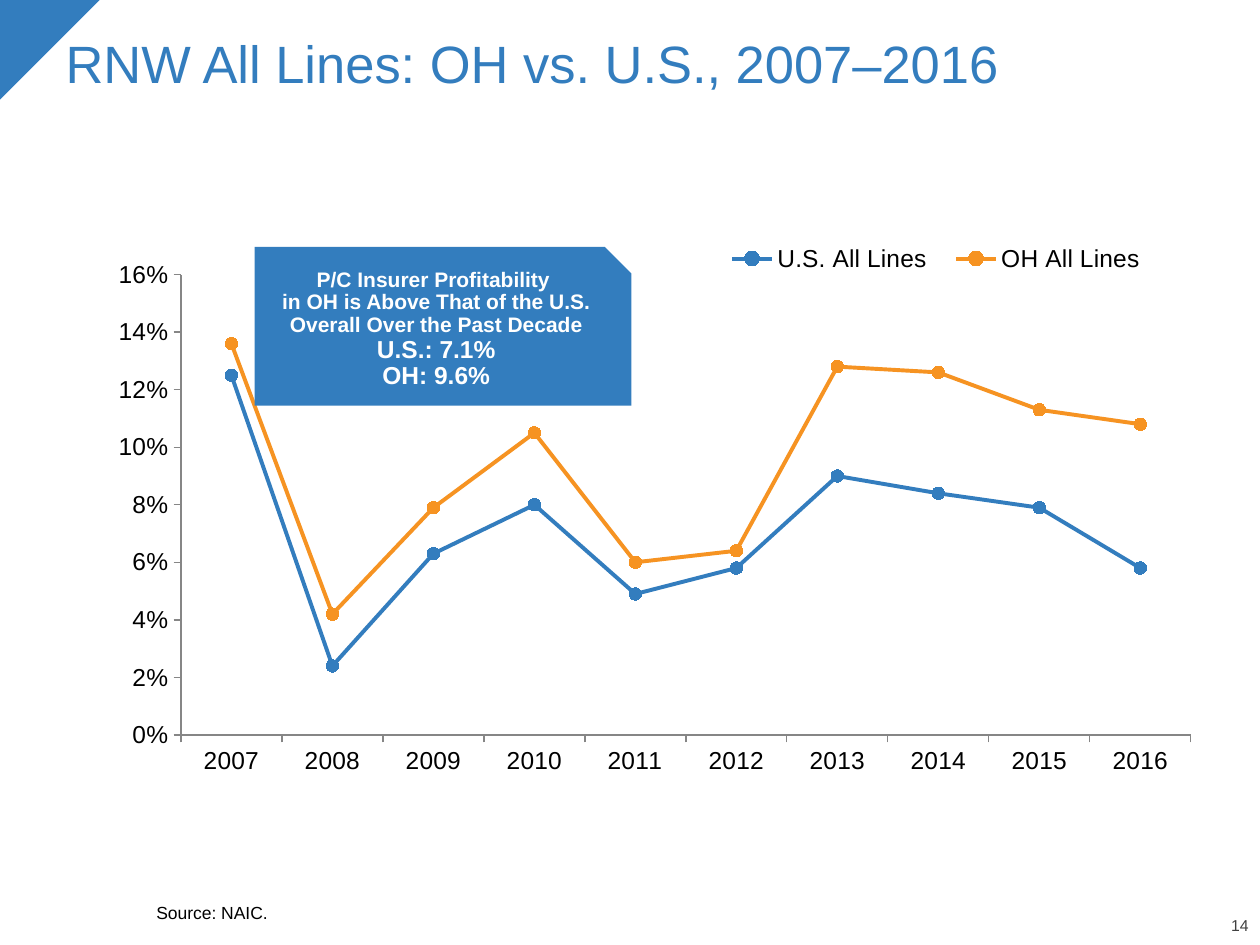
from lxml import etree
from pptx import Presentation
from pptx.chart.data import CategoryChartData
from pptx.dml.color import RGBColor
from pptx.enum.chart import (XL_CHART_TYPE as ChartType, XL_LEGEND_POSITION as LegendPos,
                             XL_MARKER_STYLE as Marker, XL_TICK_MARK as Tick)
from pptx.enum.shapes import MSO_SHAPE as Shape
from pptx.enum.text import MSO_ANCHOR as Anchor, MSO_AUTO_SIZE as AutoSize, PP_ALIGN as Align
from pptx.oxml.ns import qn
from pptx.util import Inches, Pt

BLUE, ORANGE, BLACK, WHITE = "337DBE", "F69322", "000000", "FFFFFF"
DARK_GREY, AXIS_GREY = "404040", "868686"
YEARS = [str(year) for year in range(2007, 2017)]
RETURNS = [
    ("U.S. All Lines", BLUE,
     [0.125, 0.024, 0.063, 0.08, 0.049, 0.058, 0.09, 0.084, 0.079, 0.058]),
    ("OH All Lines", ORANGE,
     [0.136, 0.042, 0.079, 0.105, 0.06, 0.064, 0.128, 0.126, 0.113, 0.108]),
]


def rgb(value):
    return RGBColor.from_string(value)


def box(*lengths):
    return [Inches(length) for length in lengths]


def set_attrs(target, values):
    for name, value in values.items():
        setattr(target, name, value)


def set_font(font, size, color, bold=False):
    set_attrs(font, {"name": "Arial", "size": Pt(size), "bold": bold})
    font.color.rgb = rgb(color)


def set_frame(tf, insets, anchor):
    names = ("margin_left", "margin_top", "margin_right", "margin_bottom")
    set_attrs(tf, dict(zip(names, box(*insets))))
    set_attrs(tf, {"word_wrap": True, "auto_size": AutoSize.NONE, "vertical_anchor": anchor})


def write(p, lines, color, align=Align.LEFT, bold=False):
    """Fill a paragraph with (text, size) lines parted by line breaks."""
    set_attrs(p, {"alignment": align, "line_spacing": 0.9, "space_before": Pt(0)})
    for i, (text, size) in enumerate(lines):
        if i:
            p.add_line_break()
        r = p.add_run()
        r.text = text
        set_font(r.font, size, color, bold)


def place(sp, bounds):
    set_attrs(sp, dict(zip(("left", "top", "width", "height"), box(*bounds))))


def add_filled(slide, kind, bounds):
    sp = slide.shapes.add_shape(kind, *box(*bounds))
    sp.shadow.inherit = False
    sp.fill.solid()
    sp.fill.fore_color.rgb = rgb(BLUE)
    sp.line.fill.background()
    return sp


def add_corner(slide):
    add_filled(slide, Shape.RIGHT_TRIANGLE, (-0.01, 0, 0.8, 0.8)).rotation = 90


def add_page_number(slide):
    tf = slide.shapes.add_textbox(*box(9.43, 7.29, 0.48, 0.13)).text_frame
    set_frame(tf, (0, 0, 0, 0), Anchor.BOTTOM)
    write(tf.paragraphs[0], [("14", 9)], DARK_GREY, Align.RIGHT)


def fill_title(slide):
    sp = slide.shapes.title
    place(sp, (0.42, 0.25, 9.25, 1.04))
    set_frame(sp.text_frame, (0.1, 0.05, 0.1, 0.05), Anchor.TOP)
    write(sp.text_frame.paragraphs[0], [("RNW All Lines: OH vs. U.S., 2007–2016", 30)], BLUE)


def fill_source(slide):
    sp = slide.placeholders[1]
    place(sp, (1.24, 6.88, 8.4, 0.45))
    set_frame(sp.text_frame, (0, 0, 0, 0), Anchor.BOTTOM)
    p = sp.text_frame.paragraphs[0]
    pPr = p._p.get_or_add_pPr()
    pPr.set("marL", "0")
    pPr.set("indent", "0")
    etree.SubElement(pPr, qn("a:buNone"))
    write(p, [("Source: NAIC.", 10)], BLACK)


def set_layout(parent, values, before):
    """Give a plot area or legend a fixed place, in fractions of the chart."""
    for old in parent.findall(qn("c:layout")):
        parent.remove(old)
    layout = etree.Element(qn("c:layout"))
    manual = etree.SubElement(layout, qn("c:manualLayout"))
    for name, value in values.items():
        etree.SubElement(manual, qn(f"c:{name}")).set("val", str(value))
    parent.find(qn(before)).addprevious(layout)


def style_axis(axis, number_format):
    set_attrs(axis, {"has_major_gridlines": False, "major_tick_mark": Tick.OUTSIDE,
                     "minor_tick_mark": Tick.NONE})
    set_attrs(axis.tick_labels, {"number_format": number_format,
                                 "number_format_is_linked": False})
    set_font(axis.tick_labels.font, 14, BLACK)
    axis.format.line.color.rgb = rgb(AXIS_GREY)
    axis.format.line.width = Pt(0.75)


def style_series(series, color):
    series.smooth = False
    series.format.line.color.rgb = rgb(color)
    series.format.line.width = Pt(2.25)
    set_attrs(series.marker, {"style": Marker.CIRCLE, "size": 7})
    fmt = series.marker.format
    fmt.fill.solid()
    fmt.fill.fore_color.rgb = rgb(color)
    fmt.line.color.rgb = rgb(color)


def add_returns_chart(slide):
    data = CategoryChartData(number_format="0%")
    data.categories = YEARS
    for name, _, values in RETURNS:
        data.add_series(name, values)
    chart = slide.shapes.add_chart(ChartType.LINE_MARKERS, *box(0.43, 1.76, 9.15, 4.88),
                                   data).chart
    set_attrs(chart, {"has_title": False, "has_legend": True})
    set_font(chart.font, 18, BLACK)
    chart.plots[0].vary_by_categories = False
    for series, (_, color, _) in zip(chart.plots[0].series, RETURNS):
        style_series(series, color)

    style_axis(chart.category_axis, "0")
    style_axis(chart.value_axis, "0%")
    set_attrs(chart.value_axis, {"minimum_scale": 0, "maximum_scale": 0.16, "major_unit": 0.02})

    legend = chart.legend
    set_attrs(legend, {"position": LegendPos.TOP, "include_in_layout": False})
    set_font(legend.font, 14, BLACK)
    edges = {"xMode": "edge", "yMode": "edge"}
    set_layout(legend._element, {**edges, "x": 0.57, "y": 0.03, "w": 0.39, "h": 0.06},
               "c:overlay")
    plot_area = chart._chartSpace.chart.plotArea
    set_layout(plot_area, {"layoutTarget": "inner", **edges,
                           "x": 0.11, "y": 0.086, "w": 0.876, "h": 0.749}, "c:lineChart")


def add_callout(slide):
    sp = add_filled(slide, Shape.SNIP_1_RECTANGLE, (2.02, 1.96, 2.99, 1.26))
    tf = sp.text_frame
    set_frame(tf, (0.1, 0.05, 0.1, 0.1), Anchor.MIDDLE)
    message = [("P/C Insurer Profitability ", 12),
               ("in OH is Above That of the U.S. Overall Over the Past Decade", 12),
               ("U.S.: 7.1%", 14)]
    write(tf.paragraphs[0], message, WHITE, Align.CENTER, bold=True)
    write(tf.add_paragraph(), [("OH: 9.6%", 14)], WHITE, Align.CENTER, bold=True)


def main():
    prs = Presentation()
    set_attrs(prs, {"slide_width": Inches(10), "slide_height": Inches(7.5)})
    slide = prs.slides.add_slide(prs.slide_layouts[1])
    add_corner(slide)
    add_page_number(slide)
    add_returns_chart(slide)
    fill_title(slide)
    fill_source(slide)
    add_callout(slide)
    prs.save("out.pptx")


if __name__ == "__main__":
    main()
